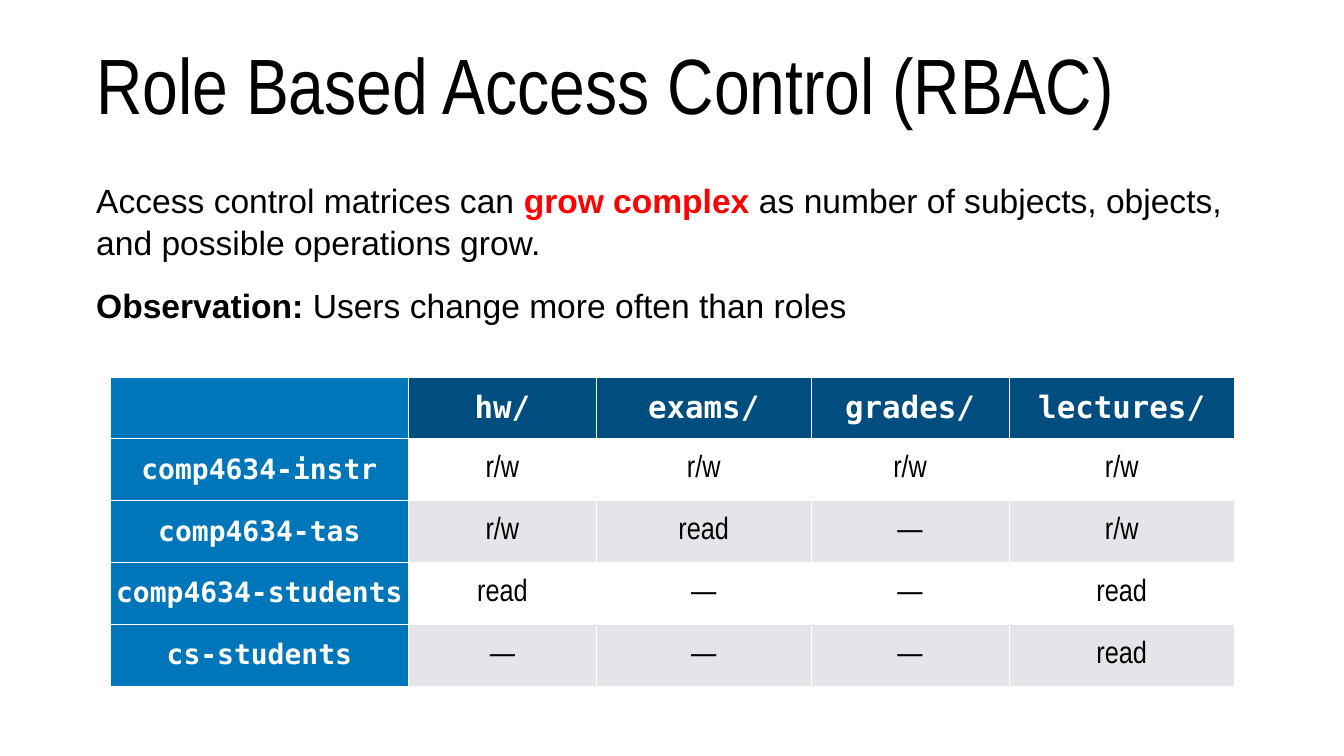
from dataclasses import dataclass

from pptx import Presentation
from pptx.dml.color import RGBColor
from pptx.enum.text import MSO_ANCHOR, MSO_AUTO_SIZE, PP_ALIGN
from pptx.util import Inches, Pt

MIDDLE = MSO_ANCHOR.MIDDLE
NO_FIT = MSO_AUTO_SIZE.NONE
LEFT, CENTER = PP_ALIGN.LEFT, PP_ALIGN.CENTER
TITLE_ONLY = 5


@dataclass(frozen=True)
class Theme:
    black: RGBColor = RGBColor.from_string("000000")
    white: RGBColor = RGBColor.from_string("FFFFFF")
    red: RGBColor = RGBColor.from_string("FF0000")
    header: RGBColor = RGBColor.from_string("004D80")
    role: RGBColor = RGBColor.from_string("0076BA")
    band: RGBColor = RGBColor.from_string("E3E5E8")
    title_font: str = "Arial Narrow"
    body_font: str = "Arial"
    code_font: str = "DejaVu Sans Mono"
    title_size: int = 112
    body_size: int = 48
    cell_size: int = 44
    role_size: int = 40
    body_gap: int = 29
    body_spacing: float = 1.05
    inset: float = 0.06


THEME = Theme()
WIDTH, HEIGHT = 26.67, 15
MARGIN = 1.85
TEXT_WIDTH = WIDTH - 2 * MARGIN
TITLE_BOX = (MARGIN, 0.39, TEXT_WIDTH, 2.5)
BODY_BOX = (MARGIN, 3.44, TEXT_WIDTH, 3.1)
TABLE_BOX = (2.19, 7.48, 22.3, 6.13)
COLUMN_SHARES = (5.91, 3.74, 4.25, 3.94, 4.46)

BODY = [
    [
        ("Access control matrices can ", False, THEME.black),
        ("grow complex ", True, THEME.red),
        ("as number of subjects, objects, and possible operations grow.", False, THEME.black),
    ],
    [
        ("Observation: ", True, THEME.black),
        ("Users change more often than roles", False, THEME.black),
    ],
]
PERMISSIONS = [
    ("", "hw/", "exams/", "grades/", "lectures/"),
    ("comp4634-instr", "r/w", "r/w", "r/w", "r/w"),
    ("comp4634-tas", "r/w", "read", "—", "r/w"),
    ("comp4634-students", "read", "—", "—", "read"),
    ("cs-students", "—", "—", "—", "read"),
]


def set_margins(target):
    target.margin_left = target.margin_right = Inches(THEME.inset)
    target.margin_top = target.margin_bottom = Inches(THEME.inset)
    target.vertical_anchor = MIDDLE


def set_font(font, name, size, color, bold=False):
    font.name, font.size, font.bold = name, Pt(size), bold
    font.color.rgb = color


def prepare_frame(shape):
    frame = shape.text_frame
    frame.word_wrap = True
    frame.auto_size = NO_FIT
    set_margins(frame)
    return frame


def place_title(slide, box, text):
    title = slide.shapes.title
    title.left, title.top, title.width, title.height = map(Inches, box)
    frame = prepare_frame(title)
    frame.text = text
    paragraph = frame.paragraphs[0]
    paragraph.alignment = LEFT
    set_font(paragraph.font, THEME.title_font, THEME.title_size, THEME.black)


def place_body(slide, box, paragraphs):
    frame = prepare_frame(slide.shapes.add_textbox(*map(Inches, box)))
    for index, runs in enumerate(paragraphs):
        paragraph = frame.add_paragraph() if index else frame.paragraphs[0]
        paragraph.space_before = Pt(THEME.body_gap)
        paragraph.line_spacing = THEME.body_spacing
        for text, bold, color in runs:
            run = paragraph.add_run()
            run.text = text
            set_font(run.font, THEME.body_font, THEME.body_size, color, bold)


def cell_style(row, column):
    if column == 0:
        return THEME.role, (THEME.code_font, THEME.role_size, THEME.white, True)
    if row == 0:
        return THEME.header, (THEME.code_font, THEME.cell_size, THEME.white, True)
    fill = THEME.white if row % 2 else THEME.band
    return fill, (THEME.title_font, THEME.cell_size, THEME.black)


def place_permissions(slide, box, rows, shares):
    left, top, width, height = box
    frame = slide.shapes.add_table(len(rows), len(shares), *map(Inches, box))
    table = frame.table
    table.first_row = table.horz_banding = False
    for column, share in zip(table.columns, shares):
        column.width = Inches(width * share / sum(shares))
    for row_index, values in enumerate(rows):
        table.rows[row_index].height = Inches(height / len(rows))
        for column_index, text in enumerate(values):
            cell = table.cell(row_index, column_index)
            fill, font = cell_style(row_index, column_index)
            cell.fill.solid()
            cell.fill.fore_color.rgb = fill
            set_margins(cell)
            cell.text = text
            paragraph = cell.text_frame.paragraphs[0]
            paragraph.alignment = CENTER
            set_font(paragraph.font, *font)


def main():
    presentation = Presentation()
    presentation.slide_width = Inches(WIDTH)
    presentation.slide_height = Inches(HEIGHT)
    slide = presentation.slides.add_slide(presentation.slide_layouts[TITLE_ONLY])
    place_title(slide, TITLE_BOX, "Role Based Access Control (RBAC)")
    place_body(slide, BODY_BOX, BODY)
    place_permissions(slide, TABLE_BOX, PERMISSIONS, COLUMN_SHARES)
    presentation.save("out.pptx")


if __name__ == "__main__":
    main()
